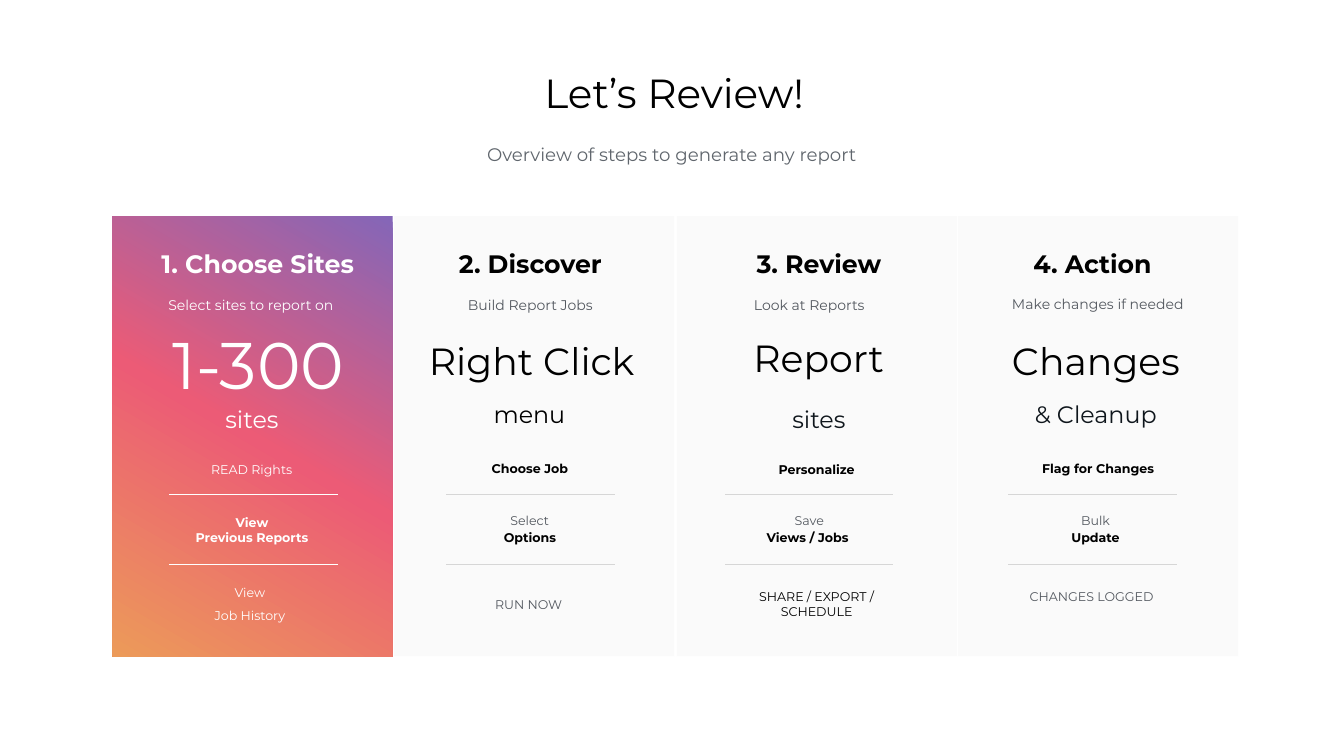
from lxml import etree
from pptx import Presentation, util as u
from pptx.dml.color import RGBColor
from pptx.enum import shapes, text
from pptx.oxml import parse_xml
from pptx.oxml.ns import nsdecls, qn

PX = 9144  # EMU per px, 100 px to the inch

THEME = {
    "font": "Montserrat",
    "card": "FAFAFA",
    "rule": "D6D6D6",
    "on_accent": "FFFFFF",
    "gradient": [(0, "8466B8"), (50, "EC5B76"), (100, "EC9A59")],
    "gradient_angle": 120,
    # style: size, colour, bold, line spacing
    "title": (58, "000000", False, None),
    "subtitle": (26, "60666D", False, 1.2),
    "heading": (36, "000000", True, None),
    "lead": (20, "53585F", False, 1.5),
    "number": (94, "000000", False, None),
    "word": (54, "000000", False, None),
    "unit": (34, "000000", False, None),
    "unit_soft": (34, "0F161C", False, None),
    "strong": (18, "000000", True, None),
    "plain": (18, "000000", False, None),
    "soft": (18, "53585F", False, 1.5),
}

# Each card: left edge, left edge of its rules, texts (style, text, x, y, w, h)
CARDS = [
    (223, 336, [
        ("heading", "1. Choose Sites", 313, 486, 397, 75),
        ("lead", "Select sites to report on", 278, 574, 440, 44),
        ("number", "1-300", 242, 660, 541, 120),
        ("unit", "sites", 423, 797, 154, 68),
        ("plain", "READ Rights", 397, 906, 205, 51),
        ("strong", "View\nPrevious Reports", 353, 1004, 294, 95),
        ("soft", "View\nJob History", 393, 1139, 206, 104),
    ]),
    (782, 886, [
        ("heading", "2. Discover", 868, 486, 369, 75),
        ("lead", "Build Report Jobs", 868, 574, 369, 44),
        ("word", "Right Click", 801, 631, 508, 168),
        ("unit", "menu", 965, 788, 171, 68),
        ("strong", "Choose Job", 961, 903, 181, 51),
        ("soft", "Select", 919, 1003, 264, 44),
        ("strong", "Options", 961, 1041, 181, 51),
        ("soft", "RUN NOW", 946, 1169, 206, 44),
    ]),
    (1343, 1439, [
        ("heading", "3. Review", 1424, 486, 402, 75),
        ("lead", "Look at Reports", 1439, 574, 334, 44),
        ("word", "Report", 1467, 626, 315, 168),
        ("unit_soft", "sites", 1548, 797, 154, 68),
        ("strong", "Personalize", 1528, 906, 185, 51),
        ("soft", "Save", 1474, 1003, 264, 44),
        ("strong", "Views / Jobs", 1494, 1041, 217, 51),
        ("plain", "SHARE / EXPORT / SCHEDULE", 1490, 1143, 261, 110),
    ]),
    (1901, 2001, [
        ("heading", "4. Action", 2001, 486, 334, 75),
        ("lead", "Make changes if needed", 1979, 566, 399, 59),
        ("word", "Changes", 1975, 655, 399, 119),
        ("unit_soft", "& Cleanup", 2036, 788, 277, 68),
        ("strong", "Flag for Changes", 2044, 903, 270, 51),
        ("soft", "Bulk", 2042, 1003, 264, 44),
        ("strong", "Update", 2071, 1041, 206, 51),
        ("soft", "CHANGES LOGGED", 2018, 1146, 296, 61),
    ]),
]
CARD_TOP, CARD_W, CARD_H = 429, 556, 873
RULE_YS, RULE_W = (980, 1119), 334

prs = Presentation()
prs.slide_width, prs.slide_height = 2667 * PX, 1500 * PX
s = prs.slides.add_slide(prs.slide_layouts[6])


def add_text(style, content, x, y, w, h, color=None, anchor=text.MSO_ANCHOR.MIDDLE):
    """Add centred text in a theme style, one paragraph per line."""
    size, style_color, bold, spacing = THEME[style]
    tf = s.shapes.add_textbox(x * PX, y * PX, w * PX, h * PX).text_frame
    tf.word_wrap = True
    tf.vertical_anchor = anchor
    tf.margin_left = tf.margin_right = tf.margin_top = tf.margin_bottom = 6 * PX
    for i, line in enumerate(content.split("\n")):
        p = tf.add_paragraph() if i else tf.paragraphs[0]
        p.alignment = text.PP_ALIGN.CENTER
        if spacing:
            p.line_spacing = spacing
        r = p.add_run()
        r.text = line
        r.font.name = THEME["font"]
        r.font.size = u.Pt(size)
        r.font.bold = bold
        r.font.color.rgb = RGBColor.from_string(color or style_color)


def fill_gradient(sp):
    """Replace the solid fill with the theme's three-stop gradient."""
    stops = "".join(f'<a:gs pos="{pos * 1000}"><a:srgbClr val="{c}"/></a:gs>'
                    for pos, c in THEME["gradient"])
    grad = parse_xml(f'<a:gradFill {nsdecls("a")} rotWithShape="1"><a:gsLst>{stops}</a:gsLst>'
                     f'<a:lin ang="{THEME["gradient_angle"] * 60000}" scaled="0"/></a:gradFill>')
    sp_pr = sp._element.spPr
    sp_pr.replace(sp_pr.find(qn("a:solidFill")), grad)


add_text("title", "Let’s Review!", 761, 129, 1154, 107)
add_text("subtitle", "Overview of steps to generate any report", 500, 269, 1667, 68,
         anchor=text.MSO_ANCHOR.TOP)

for i, (card_x, rule_x, texts) in enumerate(CARDS):
    accent = i == 0
    sp = s.shapes.add_shape(shapes.MSO_SHAPE.RECTANGLE, card_x * PX, CARD_TOP * PX,
                            CARD_W * PX, CARD_H * PX)
    sp.shadow.inherit = False
    sp.line.fill.background()
    sp.fill.solid()
    sp.fill.fore_color.rgb = RGBColor.from_string(THEME["card"])
    if accent:
        fill_gradient(sp)

    for style, content, *box in texts:
        add_text(style, content, *box, color=THEME["on_accent"] if accent else None)

    for y in RULE_YS:
        rule = s.shapes.add_connector(shapes.MSO_CONNECTOR.STRAIGHT, rule_x * PX, y * PX,
                                      (rule_x + RULE_W) * PX, y * PX)
        rule.line.width = u.Pt(1)
        rule.line.color.rgb = RGBColor.from_string(THEME["on_accent" if accent else "rule"])
        etree.SubElement(rule._element.spPr, qn("a:effectLst"))

prs.save("out.pptx")
